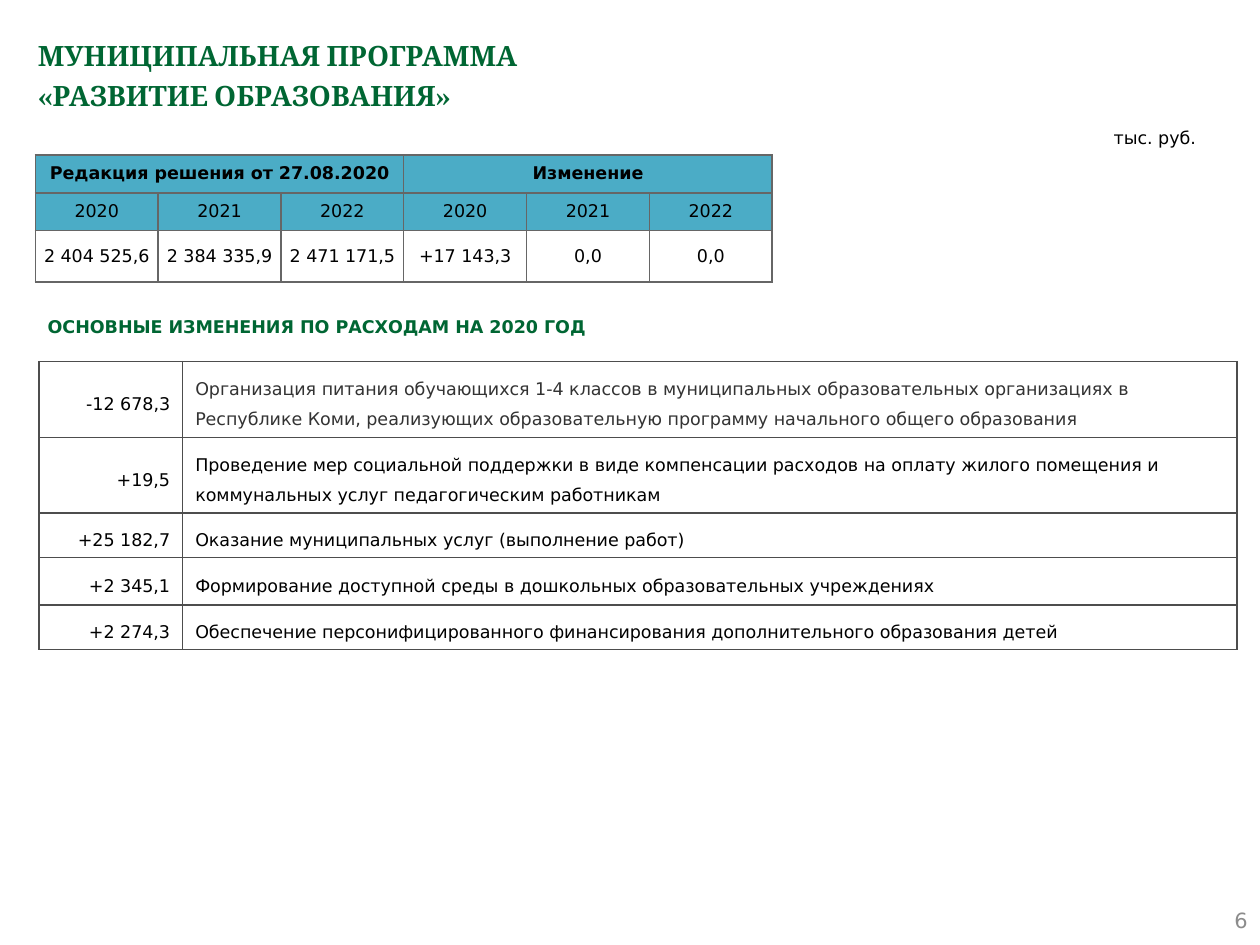
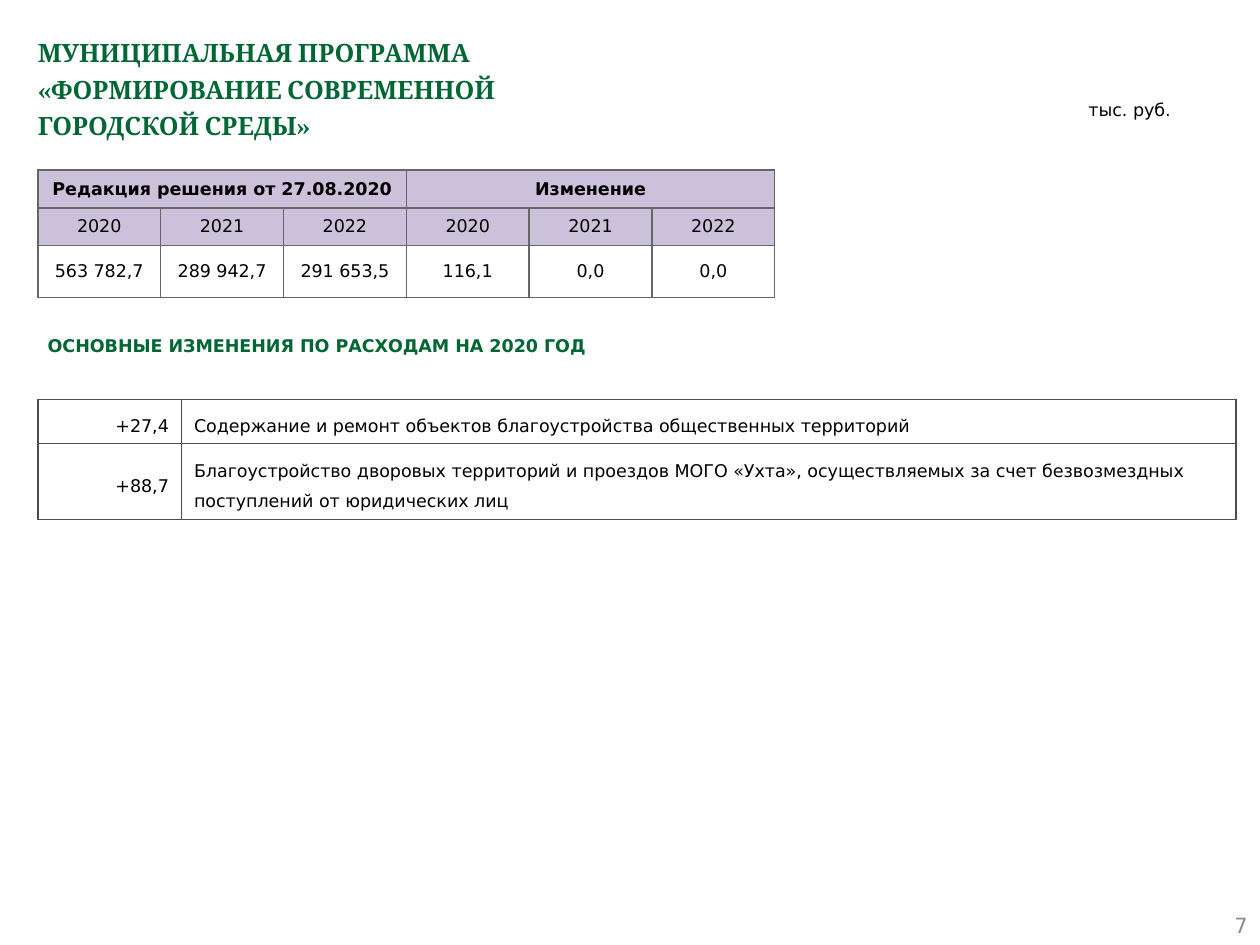
from lxml import etree
from pptx import Presentation
from pptx.dml.color import RGBColor
from pptx.enum import shapes, text
from pptx.oxml.ns import qn
from pptx.util import Inches, Pt

# Shared look
HUES = {"green": "006633", "black": "000000", "dark": "333333", "page": "8C8C8C",
        "grid": "666666", "rule": "4D4D4D", "blue": "4BACC6", "lilac": "CCC1DA"}
SANS = "DejaVu Sans"
LEFT, MID, RIGHT = text.PP_ALIGN.LEFT, text.PP_ALIGN.CENTER, text.PP_ALIGN.RIGHT
TOP, CENTER = text.MSO_ANCHOR.TOP, text.MSO_ANCHOR.MIDDLE
HEADS = ["Редакция решения от 27.08.2020", "Изменение"]
YEARS = ["2020", "2021", "2022"] * 2

# What differs from slide to slide
PAGES = [
    {"title": "МУНИЦИПАЛЬНАЯ ПРОГРАММА \n«РАЗВИТИЕ ОБРАЗОВАНИЯ»", "size": 16,
     "num": "6", "num_y": 7.1, "unit": (8.74, 0.93), "fill": "blue",
     "sums": ["2 404 525,6", "2 384 335,9", "2 471 171,5", "+17 143,3", "0,0", "0,0"],
     "sums_at": (0.28, 1.23), "head_y": 2.38, "list_at": (0.31, 2.87),
     "items": [
         ("-12 678,3", "Организация питания обучающихся 1-4 классов в муниципальных "
          "образовательных организациях в Республике Коми, реализующих "
          "образовательную программу начального общего образования", 0.59, "dark"),
         ("+19,5", "Проведение мер социальной поддержки в виде компенсации расходов "
          "на оплату жилого помещения и коммунальных услуг педагогическим "
          "работникам", 0.59, "black"),
         ("+25 182,7", "Оказание муниципальных услуг (выполнение работ)", 0.34, "black"),
         ("+2 345,1", "Формирование доступной среды в дошкольных образовательных "
          "учреждениях", 0.38, "black"),
         ("+2 274,3", "Обеспечение персонифицированного финансирования "
          "дополнительного образования детей", 0.34, "black")]},
    {"title": "МУНИЦИПАЛЬНАЯ ПРОГРАММА \n«ФОРМИРОВАНИЕ СОВРЕМЕННОЙ\nГОРОДСКОЙ СРЕДЫ»",
     "size": 14.4, "num": "7", "num_y": 7.14, "unit": (8.54, 0.7), "fill": "lilac",
     "sums": ["563 782,7", "289 942,7", "291 653,5", "116,1", "0,0", "0,0"],
     "sums_at": (0.3, 1.35), "head_y": 2.53, "list_at": (0.3, 3.17),
     "items": [
         ("+27,4", "Содержание и ремонт объектов благоустройства общественных "
          "территорий", 0.34, "black"),
         ("+88,7", "Благоустройство дворовых территорий и проездов МОГО «Ухта», "
          "осуществляемых за счет безвозмездных поступлений от юридических лиц",
          0.59, "black")]},
]


def write(frame, words, hue="black", size=10, bold=False, align=LEFT,
          gap=1.0, face=SANS, anchor=CENTER):
    """Fill a text frame with one styled paragraph."""
    frame.word_wrap = True
    frame.vertical_anchor = anchor
    par = frame.paragraphs[0]
    par.text = words
    par.alignment = align
    par.line_spacing = gap
    par.font.name, par.font.size, par.font.bold = face, Pt(size), bold
    par.font.color.rgb = RGBColor.from_string(HUES[hue])
    return par


def grid(slide, at, cols, rows, line):
    """Add an unfilled table with thin borders all round."""
    table = slide.shapes.add_table(len(rows), len(cols), Inches(at[0]), Inches(at[1]),
                                   Inches(sum(cols)), Inches(sum(rows))).table
    table.first_row = table.horz_banding = False
    for col, wide in zip(table.columns, cols):
        col.width = Inches(wide)
    for row, high in zip(table.rows, rows):
        row.height = Inches(high)
    for cell in table.iter_cells():
        cell.fill.background()
        props = cell._tc.get_or_add_tcPr()
        for spot, side in enumerate(("lnL", "lnR", "lnT", "lnB")):
            edge = etree.Element(qn("a:" + side), w=str(Pt(1)))
            fill = etree.SubElement(edge, qn("a:solidFill"))
            etree.SubElement(fill, qn("a:srgbClr"), val=HUES[line])
            props.insert(spot, edge)
    return table


deck = Presentation()
deck.slide_width, deck.slide_height = Inches(10), Inches(7.5)

for page in PAGES:
    slide = deck.slides.add_slide(deck.slide_layouts[5])

    # Title
    title = slide.shapes.title
    title.left, title.top = Inches(0.2), Inches(0.2)
    title.width, title.height = Inches(9.61), Inches(0.79)
    write(title.text_frame, page["title"], "green", page["size"], True,
          gap=1.2, face="Cambria", anchor=TOP)
    title.text_frame.auto_size = text.MSO_AUTO_SIZE.NONE

    # Page number
    num = slide.shapes.add_textbox(Inches(7.67), Inches(page["num_y"]),
                                   Inches(2.33), Inches(0.4))
    write(num.text_frame, page["num"], "page", 12, align=RIGHT)

    # Section heading
    head = slide.shapes.add_shape(shapes.MSO_SHAPE.PENTAGON, Inches(0.28),
                                  Inches(page["head_y"]), Inches(5.32), Inches(0.43))
    head.adjustments[0] = 0
    head.shadow.inherit = False
    head.fill.background()
    head.line.fill.background()
    write(head.text_frame, "ОСНОВНЫЕ ИЗМЕНЕНИЯ ПО РАСХОДАМ НА 2020 ГОД", "green", bold=True)

    # List of changes
    items = page["items"]
    table = grid(slide, page["list_at"], [1.14, 8.37], [item[2] for item in items], "rule")
    for row, (sum_, note, _, hue) in enumerate(items):
        for col, (words, tint, align) in enumerate([(sum_, "black", RIGHT), (note, hue, LEFT)]):
            cell = table.cell(row, col)
            par = write(cell.text_frame, words, tint, align=align, gap=1.5)
            par.space_after = Pt(10)
            cell.vertical_anchor = CENTER

    # Unit of measure
    unit = slide.shapes.add_textbox(*map(Inches, page["unit"]), Inches(1.01), Inches(0.3))
    write(unit.text_frame, "тыс. руб.", gap=1.2, anchor=TOP)
    unit.text_frame.auto_size = text.MSO_AUTO_SIZE.SHAPE_TO_FIT_TEXT

    # Totals by year
    table = grid(slide, page["sums_at"], [0.975] * 6, [0.3, 0.3, 0.41], "grid")
    for col in (0, 3):
        table.cell(0, col).merge(table.cell(0, col + 2))
    heads = [HEADS[0], None, None, HEADS[1], None, None]
    for row, line in enumerate([heads, YEARS, page["sums"]]):
        for col, words in enumerate(line):
            cell = table.cell(row, col)
            if row < 2:
                cell.fill.solid()
                cell.fill.fore_color.rgb = RGBColor.from_string(HUES[page["fill"]])
            if words:
                write(cell.text_frame, words, bold=row == 0, align=MID)
            cell.vertical_anchor = CENTER
            cell.margin_left = cell.margin_right = Inches(0.05)
            cell.margin_top = cell.margin_bottom = Inches(0.05)

deck.save("out.pptx")
